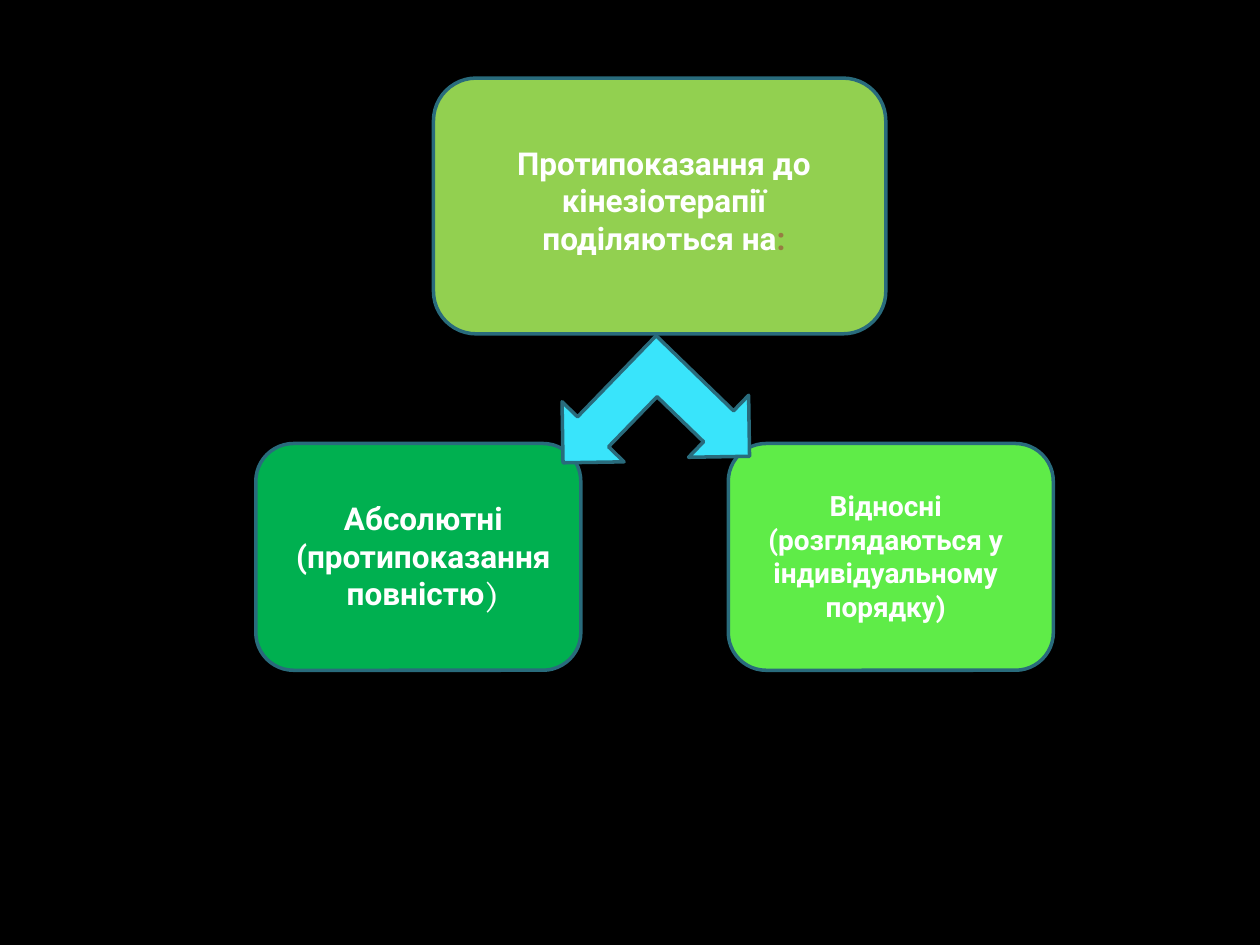
from pptx import Presentation
from pptx.dml.color import RGBColor
from pptx.enum import shapes, text
from pptx.util import Inches, Pt

COLORS = {
    "background": "000000",
    "outline": "296B7C",
    "heading": "92D050",
    "absolute": "00B050",
    "relative": "5FEC48",
    "arrow": "39E4FB",
    "text": "FFFFFF",
    "colon": "967D42",
}
BODY_FONT = "Roboto"
SERIF_FONT = "TeX Gyre Pagella"


def color(name):
    return RGBColor.from_string(COLORS[name])


def add_block(page, kind, bounds, fill, rotation=0):
    block = page.shapes.add_shape(kind, *map(Inches, bounds))
    block.shadow.inherit = False
    block.fill.solid()
    block.fill.fore_color.rgb = color(fill)
    block.line.color.rgb = color("outline")
    block.line.width = Pt(2)
    block.rotation = rotation


def add_label(page, bounds, size, runs):
    box = page.shapes.add_textbox(*map(Inches, bounds))
    frame = box.text_frame
    frame.word_wrap = True
    frame.auto_size = text.MSO_AUTO_SIZE.SHAPE_TO_FIT_TEXT
    para = frame.paragraphs[0]
    para.alignment = text.PP_ALIGN.CENTER
    for words, font, ink in runs:
        span = para.add_run()
        span.text = words
        span.font.name = font
        span.font.size = Pt(size)
        span.font.bold = True
        span.font.color.rgb = color(ink)


def main():
    deck = Presentation()
    deck.slide_width, deck.slide_height = Inches(10), Inches(7.5)
    page = deck.slides.add_slide(deck.slide_layouts[6])
    page.background.fill.solid()
    page.background.fill.fore_color.rgb = color("background")

    kinds = shapes.MSO_SHAPE
    add_block(page, kinds.FLOWCHART_ALTERNATE_PROCESS,
              (3.44, 0.62, 3.59, 2.03), "heading")
    for left, fill in ((2.03, "absolute"), (5.78, "relative")):
        add_block(page, kinds.ROUNDED_RECTANGLE, (left, 3.52, 2.58, 1.8), fill)
    add_block(page, kinds.LEFT_UP_ARROW, (4.52, 2.7, 1.37, 1.41), "arrow", 224.1)

    add_label(page, (3.67, 1.09, 3.2, 1.01), 18, [
        ("Протипоказання до кінезіотерапії поділяються на", BODY_FONT, "text"),
        (":", BODY_FONT, "colon"),
    ])
    add_label(page, (2.19, 3.91, 2.34, 1.01), 18, [
        ("Абсолютні (протипоказання повністю", BODY_FONT, "text"),
        (")", SERIF_FONT, "text"),
    ])
    add_label(page, (5.86, 3.83, 2.34, 1.18), 16, [
        ("Відносні (розглядаються у індивідуальному порядку)", BODY_FONT, "text"),
    ])
    deck.save("out.pptx")


if __name__ == "__main__":
    main()
